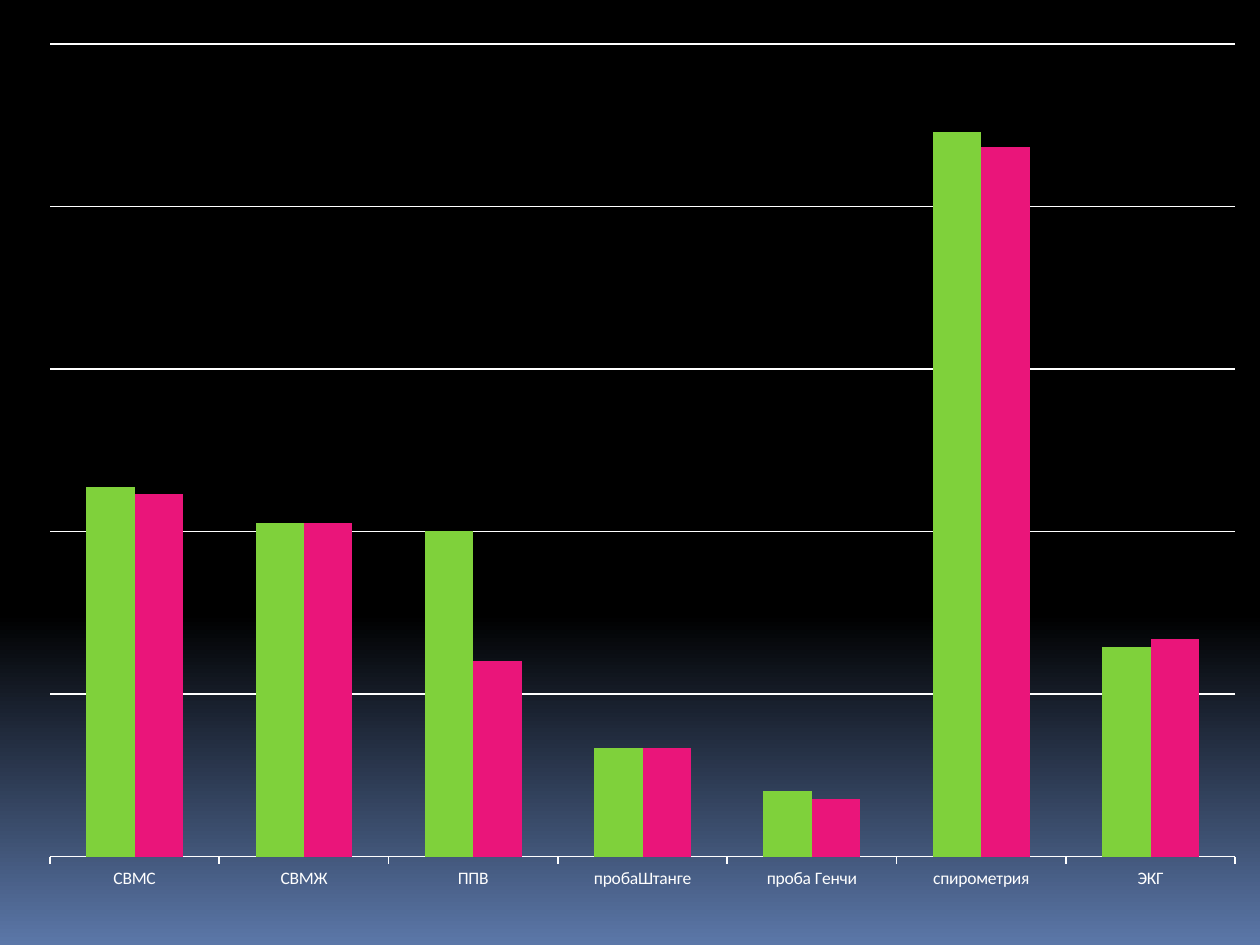
from lxml import etree
from pptx import Presentation
from pptx.chart.data import CategoryChartData
from pptx.dml.color import RGBColor
from pptx.enum import chart as ch
from pptx.oxml import ns
from pptx.util import Inches, Pt

BLACK = RGBColor(0x00, 0x00, 0x00)
BLUE = RGBColor(0x5B, 0x77, 0xA8)
WHITE = RGBColor(0xFF, 0xFF, 0xFF)
GREEN = RGBColor(0x7F, 0xD1, 0x3B)
PINK = RGBColor(0xEA, 0x15, 0x7A)

CATEGORIES = ["СВМС", "СВМЖ", "ППВ", "пробаШтанге", "проба Генчи", "спирометрия", "ЭКГ"]
SERIES = [
    ("Series 1", [51, 46, 45, 15, 9, 100, 29], GREEN),
    ("Series 2", [50, 46, 27, 15, 8, 98, 30], PINK),
]
GRID_STEP = 22.44
GRID_COUNT = 5

presentation = Presentation()
presentation.slide_width = Inches(10)
presentation.slide_height = Inches(7.5)
slide = presentation.slides.add_slide(presentation.slide_layouts[6])

# Background: black down to 65 %, then fading to blue
background = slide.background.fill
background.gradient()
background.gradient_angle = 270
for stop, position, color in zip(background.gradient_stops, (0.65, 1), (BLACK, BLUE)):
    stop.position = position
    stop.color.rgb = color

# Clustered columns
data = CategoryChartData()
data.categories = CATEGORIES
for name, values, _ in SERIES:
    data.add_series(name, values)
chart = slide.shapes.add_chart(
    ch.XL_CHART_TYPE.COLUMN_CLUSTERED,
    Inches(0.2), Inches(0.21), Inches(9.8), Inches(7.01), data,
).chart
chart.has_title = False
chart.has_legend = False
chart.font.name = "Calibri"
chart.font.size = Pt(10)
chart.font.color.rgb = WHITE

plot = chart.plots[0]
plot.vary_by_categories = False
plot.gap_width = 150
plot.overlap = 0
for series, (_, _, color) in zip(plot.series, SERIES):
    series.invert_if_negative = False
    series.format.fill.solid()
    series.format.fill.fore_color.rgb = color

category_axis = chart.category_axis
category_axis.major_tick_mark = ch.XL_TICK_MARK.OUTSIDE
category_axis.has_major_gridlines = False

value_axis = chart.value_axis
value_axis.minimum_scale = 0
value_axis.maximum_scale = GRID_STEP * GRID_COUNT
value_axis.major_unit = GRID_STEP
value_axis.has_major_gridlines = True
value_axis.visible = False

for line in (category_axis.format.line, value_axis.major_gridlines.format.line):
    line.color.rgb = WHITE
    line.width = Pt(1)

# Fixed inner plot area, as fractions of the chart
plot_area = plot._element.getparent()
for old_layout in plot_area.findall(ns.qn("c:layout")):
    plot_area.remove(old_layout)
layout = etree.Element(ns.qn("c:layout"))
manual = etree.SubElement(layout, ns.qn("c:manualLayout"))
settings = {"layoutTarget": "inner", "xMode": "edge", "yMode": "edge",
            "x": 0.02, "y": 0.02, "w": 0.96, "h": 0.92}
for tag, value in settings.items():
    etree.SubElement(manual, ns.qn(f"c:{tag}")).set("val", str(value))
plot_area.insert(0, layout)

presentation.save("out.pptx")
